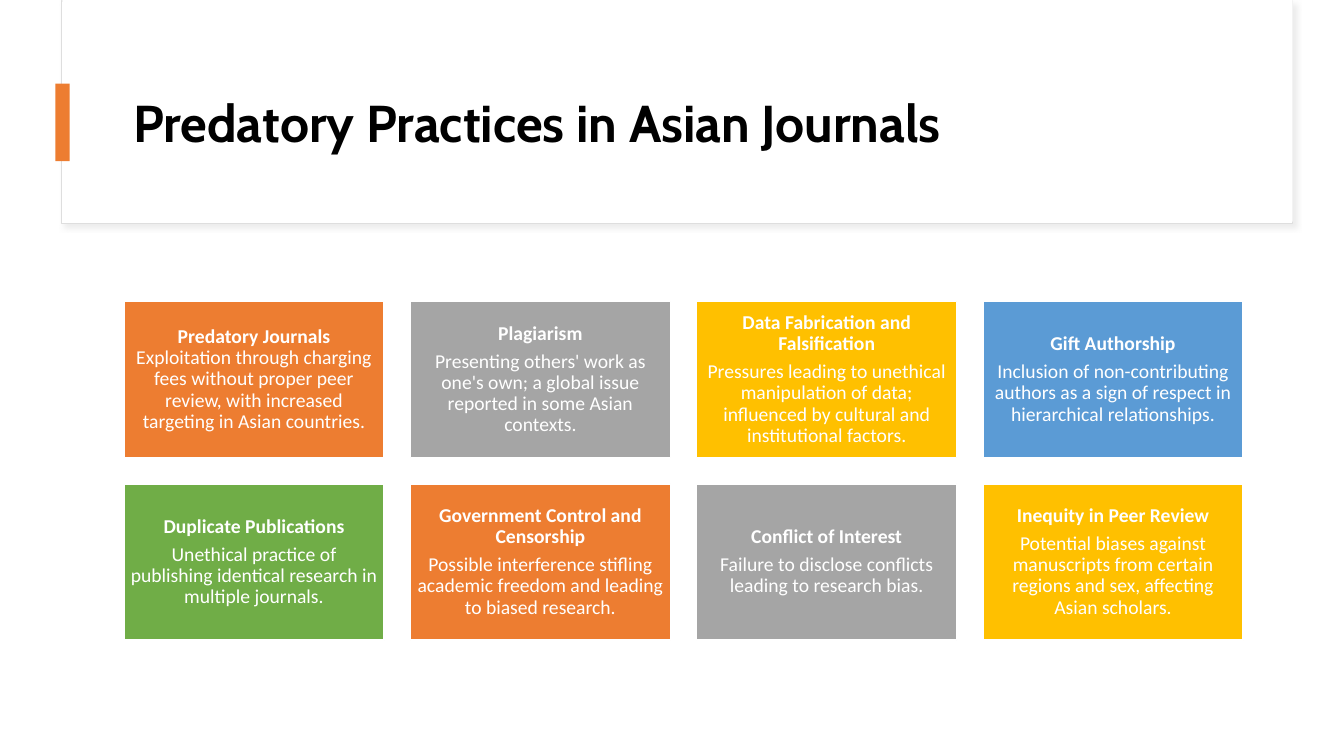
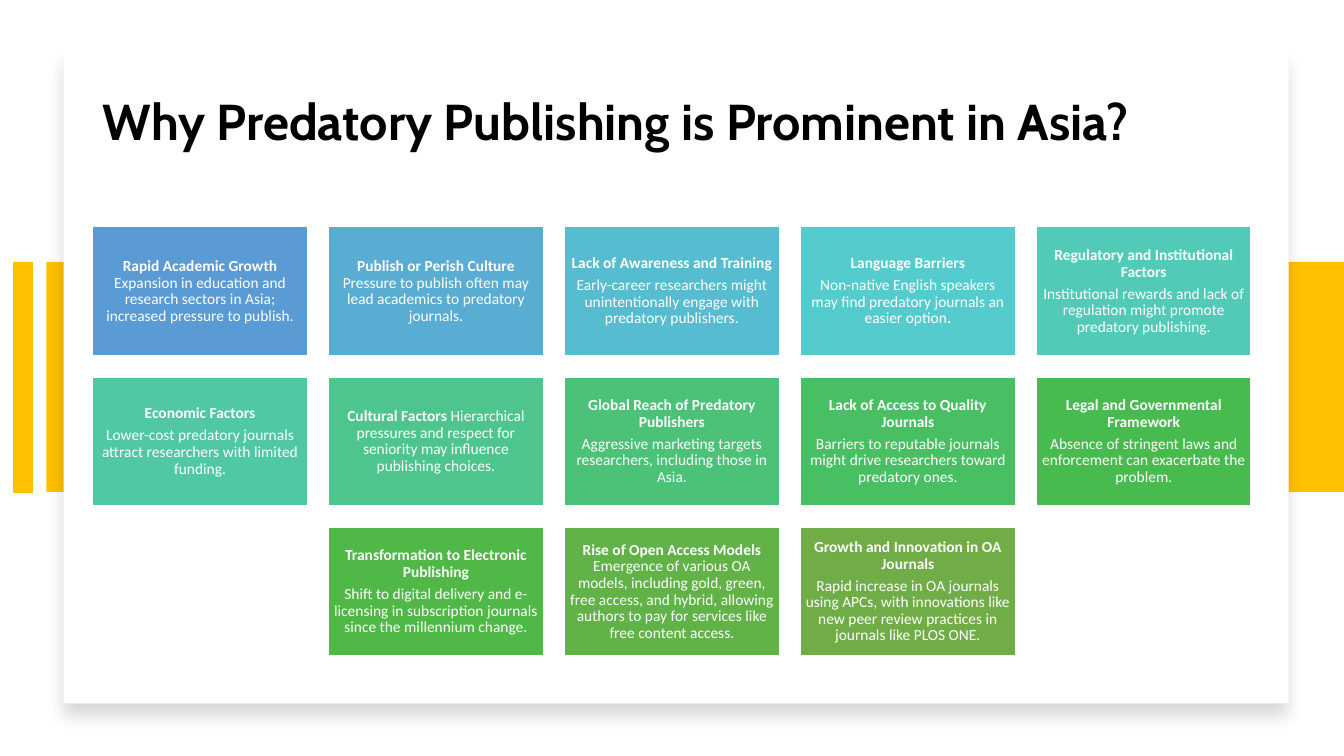
from dataclasses import dataclass
from itertools import cycle

from lxml import etree
from pptx import Presentation
from pptx.dml import color
from pptx.enum import shapes, text
from pptx.oxml import ns
from pptx.util import Inches, Pt

WHITE, BLACK = "FFFFFF", "000000"
ORANGE, GRAY, GOLD, BLUE, GREEN = "ED7D31", "A5A5A5", "FFC000", "5B9BD5", "70AD47"
ACCENTS = [ORANGE, GRAY, GOLD, BLUE, GREEN]
BLUE_TO_GREEN = [
    BLUE, "59ACD2", "56BCD0", "54CCCD", "52CAB8", "4FC8A3", "4DC58D",
    "4BC278", "49BF64", "48BB4F", "50B846", "61B247", GREEN,
]
TITLE_FONT, BODY_FONT = "Cabin", "Calibri"
LINE_SPACING = 0.9


@dataclass(frozen=True)
class Area:
    left: float
    top: float
    width: float
    height: float

    def lengths(self) -> list:
        return [Inches(n) for n in (self.left, self.top, self.width, self.height)]


@dataclass(frozen=True)
class Shadow:
    tint: str
    opacity: int
    blur: float
    distance: float
    angle: int


@dataclass(frozen=True)
class Card:
    heading: str
    detail: str
    inline: bool = False
    bold_end: str = ""


@dataclass(frozen=True)
class Grid:
    first: Area
    columns: int
    column_step: float
    row_step: float
    inset: float
    size: int

    def place(self, index: int, count: int) -> Area:
        row, column = divmod(index, self.columns)
        in_row = min(self.columns, count - row * self.columns)
        shift = (self.columns - in_row) / 2
        return Area(
            self.first.left + (column + shift) * self.column_step,
            self.first.top + row * self.row_step,
            self.first.width,
            self.first.height,
        )


PRACTICES = [
    Card("Predatory Journals",
         " Exploitation through charging fees without proper peer review, "
         "with increased targeting in Asian countries.", inline=True),
    Card("Plagiarism",
         "Presenting others' work as one's own; a global issue reported in some Asian contexts."),
    Card("Data Fabrication and Falsification",
         "Pressures leading to unethical manipulation of data; "
         "influenced by cultural and institutional factors."),
    Card("Gift Authorship",
         "Inclusion of non-contributing authors as a sign of respect "
         "in hierarchical relationships."),
    Card("Duplicate Publications",
         "Unethical practice of publishing identical research in multiple journals."),
    Card("Government Control and Censorship",
         "Possible interference stifling academic freedom and leading to biased research."),
    Card("Conflict of Interest",
         "Failure to disclose conflicts leading to research bias."),
    Card("Inequity in Peer Review",
         "Potential biases against manuscripts from certain regions and sex, "
         "affecting Asian scholars."),
]

REASONS = [
    Card("Rapid Academic Growth",
         " Expansion in education and research sectors in Asia; "
         "increased pressure to publish.", inline=True),
    Card("Publish or Perish Culture",
         " Pressure to publish often may lead academics to predatory journals.", inline=True),
    Card("Lack of Awareness and Training",
         "Early-career researchers might unintentionally engage with predatory publishers."),
    Card("Language Barriers",
         "Non-native English speakers may find predatory journals an easier option",
         bold_end="."),
    Card("Regulatory and Institutional Factors",
         "Institutional rewards and lack of regulation might promote predatory publishing."),
    Card("Economic Factors",
         "Lower-cost predatory journals attract researchers with limited funding."),
    Card("Cultural Factors",
         " Hierarchical pressures and respect for seniority may influence publishing choices.",
         inline=True),
    Card("Global Reach of Predatory Publishers",
         "Aggressive marketing targets researchers, including those in Asia."),
    Card("Lack of Access to Quality Journals",
         "Barriers to reputable journals might drive researchers toward predatory ones."),
    Card("Legal and Governmental Framework",
         "Absence of stringent laws and enforcement can exacerbate the problem."),
    Card("Transformation to Electronic Publishing",
         "Shift to digital delivery and e-licensing in subscription journals "
         "since the millennium change."),
    Card("Rise of Open Access Models",
         " Emergence of various OA models, including gold, green, free access, and hybrid, "
         "allowing authors to pay for services like free content access.", inline=True),
    Card("Growth and Innovation in OA Journals",
         "Rapid increase in OA journals using APCs, with innovations like new peer review "
         "practices in journals like PLOS ONE."),
]

PRACTICE_GRID = Grid(Area(1.23, 2.99, 2.58, 1.55), 4, 2.84, 1.81, 0.06, 14)
REASON_GRID = Grid(Area(0.92, 2.25, 2.13, 1.28), 5, 2.34, 1.49, 0.05, 11)


def rgb(value: str) -> color.RGBColor:
    return color.RGBColor.from_string(value)


def add_box(page, area: Area, fill: str, outline: str = "", weight: float = 1):
    box = page.shapes.add_shape(shapes.MSO_SHAPE.RECTANGLE, *area.lengths())
    box.shadow.inherit = False
    box.fill.solid()
    box.fill.fore_color.rgb = rgb(fill)
    if outline:
        box.line.color.rgb = rgb(outline)
        box.line.width = Pt(weight)
    else:
        box.line.fill.background()
    return box


def cast_shadow(box, shadow: Shadow) -> None:
    effects = box.element.spPr.find(ns.qn("a:effectLst"))
    outer = etree.SubElement(
        effects, ns.qn("a:outerShdw"),
        blurRad=str(Pt(shadow.blur)), dist=str(Pt(shadow.distance)),
        dir=str(shadow.angle * 60000), algn="t", rotWithShape="0",
    )
    tint = etree.SubElement(outer, ns.qn("a:srgbClr"), val=shadow.tint)
    etree.SubElement(tint, ns.qn("a:alpha"), val=str(shadow.opacity * 1000))


def format_span(span, name: str, size: float, tint: str, bold: bool) -> None:
    span.font.name = name
    span.font.size = Pt(size)
    span.font.color.rgb = rgb(tint)
    span.font.bold = bold


def add_title(page, wording: str, area: Area, size: float) -> None:
    title = page.shapes.title
    title.left, title.top, title.width, title.height = area.lengths()
    title.element.getparent().append(title.element)
    frame = title.text_frame
    frame.text = wording
    frame.word_wrap = True
    frame.auto_size = text.MSO_AUTO_SIZE.NONE
    frame.vertical_anchor = text.MSO_ANCHOR.MIDDLE
    para = frame.paragraphs[0]
    para.alignment = text.PP_ALIGN.LEFT
    para.line_spacing = LINE_SPACING
    format_span(para.runs[0], TITLE_FONT, size, BLACK, True)


def add_card(page, card: Card, area: Area, fill: str, grid: Grid) -> None:
    frame = add_box(page, area, fill, WHITE).text_frame
    frame.word_wrap = True
    frame.vertical_anchor = text.MSO_ANCHOR.MIDDLE
    frame.margin_left = frame.margin_right = Inches(grid.inset)
    frame.margin_top = frame.margin_bottom = Inches(grid.inset)
    frame.text = card.heading
    last = frame.paragraphs[0] if card.inline else frame.add_paragraph()
    last.add_run().text = card.detail
    if card.bold_end:
        last.add_run().text = card.bold_end
    for para in frame.paragraphs:
        para.alignment = text.PP_ALIGN.CENTER
        para.line_spacing = LINE_SPACING
        para.space_after = Pt(0.35 * grid.size)
        for span in para.runs:
            format_span(span, BODY_FONT, grid.size, WHITE, span.text != card.detail)


def add_cards(page, cards: list[Card], fills: list[str], grid: Grid) -> None:
    for index, (card, fill) in enumerate(zip(cards, cycle(fills))):
        add_card(page, card, grid.place(index, len(cards)), fill, grid)


def add_rule(page, x: float, top: float, bottom: float, tint: str, weight: float) -> None:
    rule = page.shapes.add_connector(
        shapes.MSO_CONNECTOR.STRAIGHT, Inches(x), Inches(top), Inches(x), Inches(bottom))
    rule.line.color.rgb = rgb(tint)
    rule.line.width = Pt(weight)
    etree.SubElement(rule.element.spPr, ns.qn("a:effectLst"))


def build_practices(page) -> None:
    frame = add_box(page, Area(0.61, 0.01, 12.21, 2.21), WHITE, "DEDEDE", 0.75)
    cast_shadow(frame, Shadow("D9D9D9", 50, 4, 3, 45))
    add_box(page, Area(0.62, 0, 12.2, 2.2), WHITE)
    add_title(page, "Predatory Practices in Asian Journals", Area(1.22, 0.6, 11.12, 1.29), 37)
    add_box(page, Area(0.55, 0.83, 0.14, 0.77), ORANGE)
    add_cards(page, PRACTICES, ACCENTS, PRACTICE_GRID)


def build_reasons(page) -> None:
    add_box(page, Area(0.46, 2.6, 12.87, 2.28), GOLD)
    add_rule(page, 0.23, 2.6, 4.89, GOLD, 14)
    panel = add_box(page, Area(0.63, 0.51, 12.15, 6.47), WHITE)
    cast_shadow(panel, Shadow(BLACK, 15, 11, 10, 90))
    add_title(page, "Why Predatory Publishing is Prominent in Asia?",
              Area(0.92, 0.61, 11.5, 1.24), 36)
    add_cards(page, REASONS, BLUE_TO_GREEN, REASON_GRID)


def main() -> None:
    deck = Presentation()
    deck.slide_width, deck.slide_height = Inches(13.33), Inches(7.5)
    title_only = deck.slide_layouts[5]
    for build in (build_practices, build_reasons):
        build(deck.slides.add_slide(title_only))
    deck.save("out.pptx")


if __name__ == "__main__":
    main()
